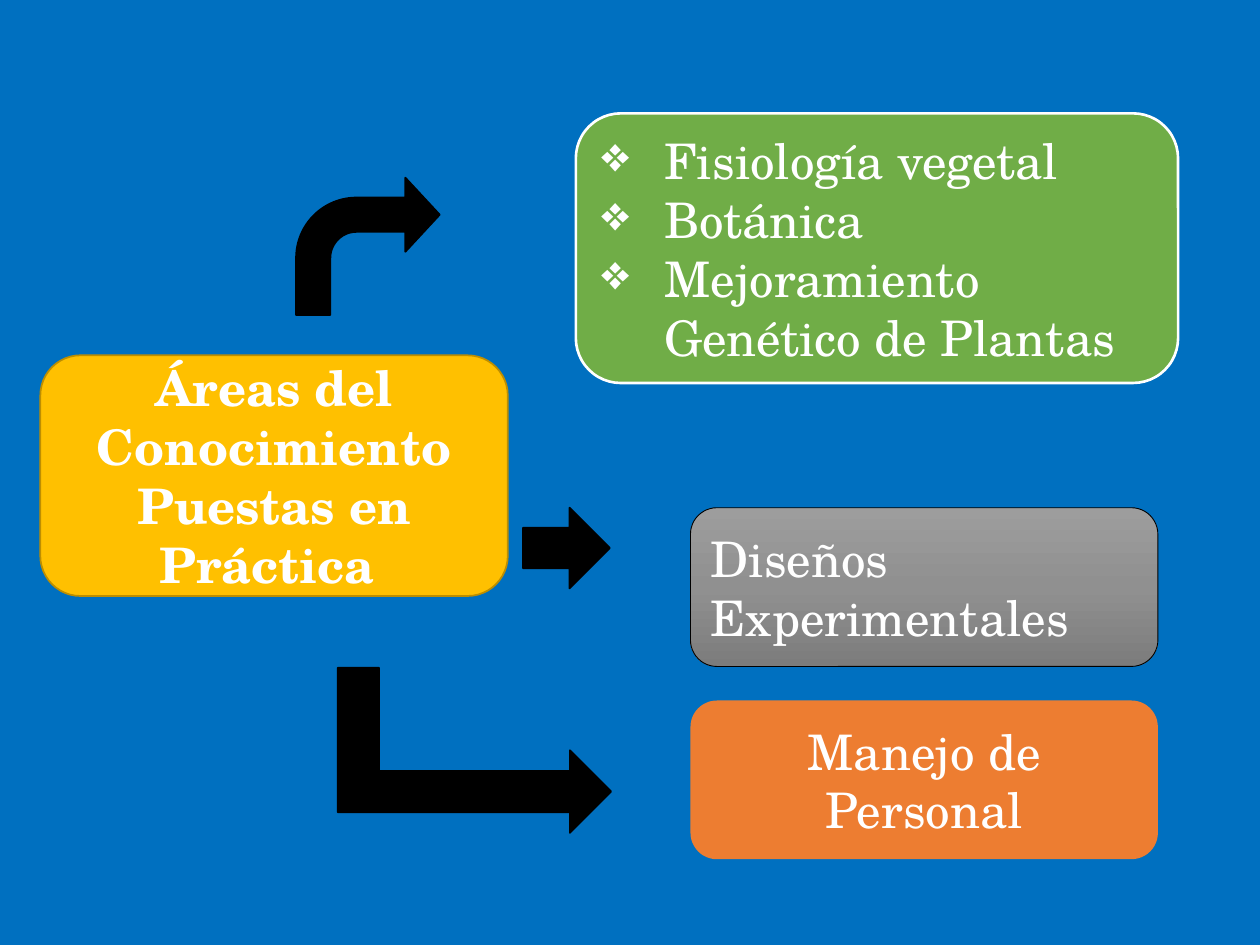
from copy import deepcopy
from dataclasses import dataclass

from lxml.etree import SubElement
from pptx import Presentation
from pptx.dml.color import RGBColor
from pptx.enum.shapes import MSO_SHAPE as Shape
from pptx.enum.text import MSO_ANCHOR as Anchor, PP_ALIGN as Align
from pptx.oxml.ns import qn
from pptx.util import Inches, Pt


@dataclass(frozen=True)
class Theme:
    """Colours, font and type size of the slide."""
    back: str = "0070C0"
    text: str = "FFFFFF"
    arrow: str = "000000"
    hub: str = "FFC000"
    hub_line: str = "BD8E00"
    plants: str = "70AD47"
    designs: tuple = ("9D9D9D", "909090", "7C7C7C")
    staff: str = "ED7D31"
    font: str = "TeX Gyre Schola"
    size: int = 28


THEME = Theme()


def rgb(value):
    """Turn a hex string into a colour."""
    return RGBColor.from_string(value)


def fill_gradient(sp, colors):
    """Fill a shape from top to bottom with evenly spaced colours."""
    sp.fill.gradient()
    sp.fill.gradient_angle = 270
    stops = sp._element.spPr.find(qn("a:gradFill")).find(qn("a:gsLst"))
    while len(stops) < len(colors):
        stops.append(deepcopy(stops[0]))
    for i, (stop, color) in enumerate(zip(sp.fill.gradient_stops, colors)):
        stop.position = i / (len(colors) - 1)
        stop.color.rgb = rgb(color)


def add_shape(s, kind, box, fill, line=None, width=1):
    """Add a flat preset shape in the given box."""
    sp = s.shapes.add_shape(kind, *map(Inches, box))
    sp.shadow.inherit = False
    if isinstance(fill, tuple):
        fill_gradient(sp, fill)
    else:
        sp.fill.solid()
        sp.fill.fore_color.rgb = rgb(fill)
    if line:
        sp.line.color.rgb = rgb(line)
        sp.line.width = Pt(width)
    else:
        sp.line.fill.background()
    return sp


def add_bullet(p):
    """Give a paragraph a diamond bullet with a hanging indent."""
    pPr = p._p.get_or_add_pPr()
    pPr.set("marL", str(Inches(0.5)))
    pPr.set("indent", str(-Inches(0.5)))
    SubElement(pPr, qn("a:buChar")).set("char", "❖")


def add_card(s, box, lines, fill, line=None, width=1, align=Align.LEFT, bold=False, bullets=False):
    """Add a rounded card with its text."""
    tf = add_shape(s, Shape.ROUNDED_RECTANGLE, box, fill, line, width).text_frame
    tf.word_wrap = True
    tf.vertical_anchor = Anchor.MIDDLE
    formats = {"name": THEME.font, "size": Pt(THEME.size), "bold": bold}
    for i, text in enumerate(lines):
        p = tf.add_paragraph() if i else tf.paragraphs[0]
        p.alignment = align
        if bullets:
            add_bullet(p)
        r = p.add_run()
        r.text = text
        for key, value in formats.items():
            setattr(r.font, key, value)
        r.font.color.rgb = rgb(THEME.text)


def add_arrow(s, kind, box, adjustments=(), rotation=0):
    """Add a block arrow."""
    sp = add_shape(s, kind, box, THEME.arrow, THEME.arrow)
    sp.rotation = rotation
    for i, value in enumerate(adjustments):
        sp.adjustments[i] = value


def add_hub(s, box):
    """Add the central topic."""
    add_card(s, box, ["Áreas del Conocimiento Puestas en Práctica "], THEME.hub,
             THEME.hub_line, align=Align.CENTER, bold=True)


def add_lower_areas(s, box):
    """Stack the two lower areas in a box with a gap between them."""
    left, top, width, height = box
    card_height = 1.26
    add_card(s, (left, top, width, card_height), ["Diseños Experimentales"],
             THEME.designs, THEME.arrow, 0.5)
    add_card(s, (left, top + height - card_height, width, card_height),
             ["Manejo de Personal"], THEME.staff, align=Align.CENTER)


def add_arrows(s, box):
    """Add the three arrows that lead from the hub to the areas."""
    left, top = box[:2]
    add_arrow(s, Shape.RIGHT_ARROW, (left + 1.8, top + 2.62, 0.69, 0.64))
    add_arrow(s, Shape.BENT_ARROW, (left, top, 1.14, 1.09), (0.25, 0.27, 0.25, 0.44))
    add_arrow(s, Shape.BENT_UP_ARROW, (left + 0.76, top + 3.46, 1.31, 2.17), rotation=90)


def add_plants(s, box):
    """Add the list of plant sciences."""
    add_card(s, box, ["Fisiología vegetal", "Botánica", "Mejoramiento Genético de Plantas"],
             THEME.plants, THEME.text, 1.5, bullets=True)


def main():
    """Build and save the slide."""
    prs = Presentation()
    prs.slide_width, prs.slide_height = Inches(10), Inches(7.5)
    s = prs.slides.add_slide(prs.slide_layouts[6])
    s.background.fill.solid()
    s.background.fill.fore_color.rgb = rgb(THEME.back)
    add_hub(s, (0.32, 2.82, 3.71, 1.91))
    add_lower_areas(s, (5.48, 4.03, 3.71, 2.79))
    add_arrows(s, (2.35, 1.41, 2.5, 5.2))
    add_plants(s, (4.57, 0.9, 4.78, 2.14))
    prs.save("out.pptx")


if __name__ == "__main__":
    main()
